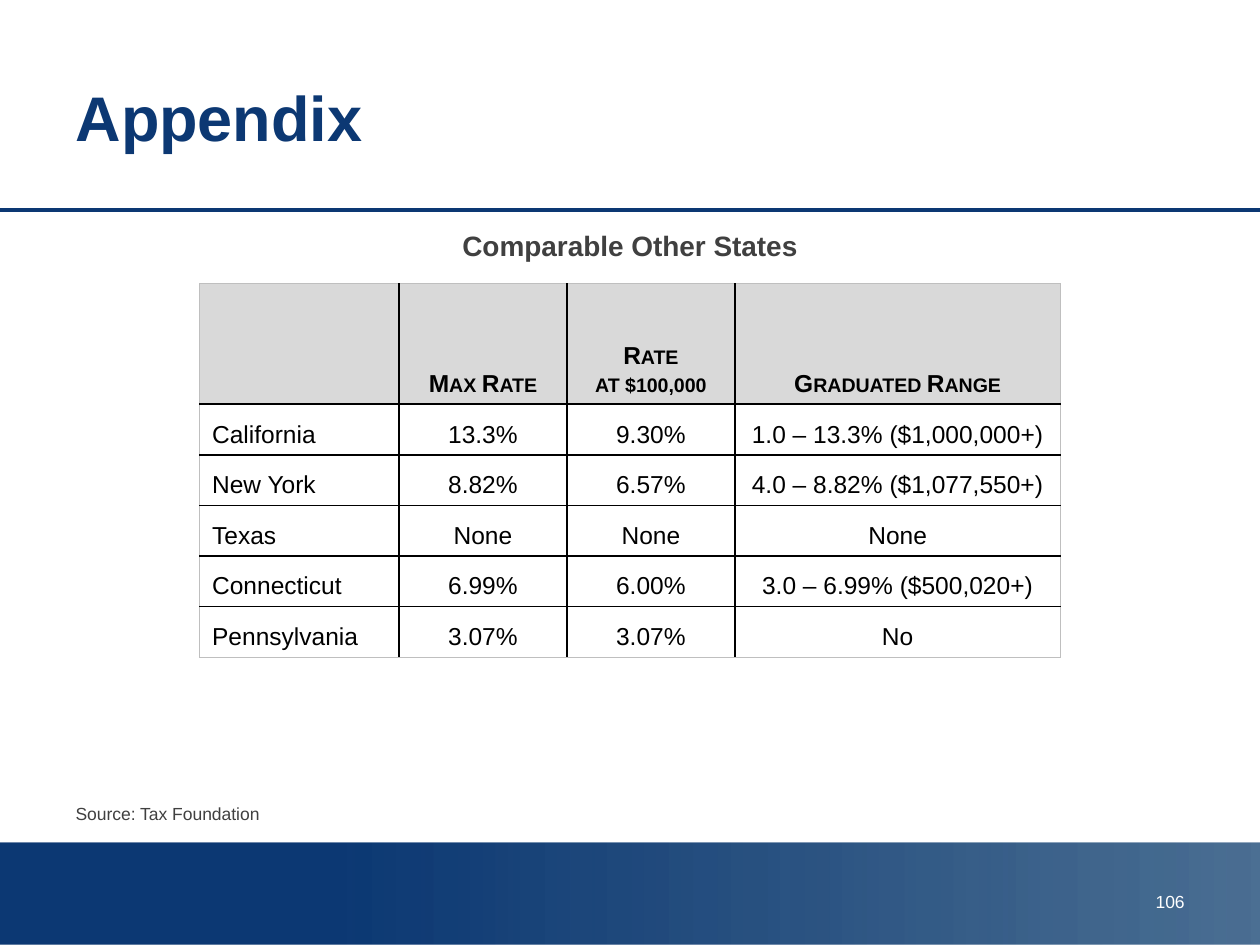
"""Build the appendix slide with a table of state tax rates."""
from pptx import Presentation
from pptx.dml.color import RGBColor
from pptx.enum import shapes, text
from pptx.oxml import parse_xml, ns
from pptx.util import Pt

THEME = {
    "font": "Arial",
    "navy": "0C3873", "deep": "003366", "body": "404040", "white": "FFFFFF",
    "black": "000000", "head": "D9D9D9", "edge": "BFBFBF",
    "title": 36, "sub": 16, "cell": 14, "small": 10,
}
MID = text.PP_ALIGN.CENTER


def style(para, size, color, bold=False, align=text.PP_ALIGN.LEFT):
    para.alignment = align
    for run in para.runs:
        font = run.font
        font.name = THEME["font"]
        font.size = Pt(THEME[size])
        font.bold = bold
        font.color.rgb = RGBColor.from_string(THEME[color])


def border(cell, side, color, width):
    cell.get_or_add_tcPr().append(parse_xml(
        f'<a:{side} {ns.nsdecls("a")} w="{Pt(width)}"><a:solidFill>'
        f'<a:srgbClr val="{THEME[color]}"/></a:solidFill></a:{side}>'))


deck = Presentation()
deck.slide_width, deck.slide_height = Pt(720), Pt(540)
slide = deck.slides.add_slide(deck.slide_layouts[1])
title, body = slide.placeholders

bar = slide.shapes.add_shape(
    shapes.MSO_SHAPE.RECTANGLE, Pt(0), Pt(481.5), Pt(721.5), Pt(58.5))
bar.shadow.inherit = False
bar.line.fill.background()
bar.fill.gradient()
bar.fill.gradient_angle = 0
for stop, (spot, tone) in zip(bar.fill.gradient_stops, [(0.25, "navy"), (1, "deep")]):
    stop.position = spot
    stop.color.rgb = RGBColor.from_string(THEME[tone])
last = bar._element.spPr.findall(".//" + ns.qn("a:srgbClr"))[-1]
last.append(parse_xml(f'<a:alpha {ns.nsdecls("a")} val="70000"/>'))

rule = slide.shapes.add_connector(
    shapes.MSO_CONNECTOR.STRAIGHT, Pt(0), Pt(120), Pt(720), Pt(120))
rule.line.color.rgb = RGBColor.from_string(THEME["navy"])
rule.line.width = Pt(2)
rule._element.spPr.append(parse_xml(f'<a:effectLst {ns.nsdecls("a")}/>'))

title.left, title.top, title.width, title.height = Pt(36), Pt(21.6), Pt(648), Pt(90)
title.text_frame.text = "Appendix"
title.text_frame.auto_size = text.MSO_AUTO_SIZE.NONE
title.text_frame.vertical_anchor = text.MSO_ANCHOR.MIDDLE
style(title.text_frame.paragraphs[0], "title", "navy", True)

body.left, body.top, body.width, body.height = Pt(36), Pt(127), Pt(648), Pt(355)
body.text_frame.text = "Comparable Other States\nSource: Tax Foundation"
body.text_frame.auto_size = text.MSO_AUTO_SIZE.NONE
sub, source = body.text_frame.paragraphs
for para, gap in [(sub, 0), (source, 309)]:
    props = para._p.get_or_add_pPr()
    props.set("marL", "0")
    props.set("indent", "0")
    props.append(parse_xml(f'<a:buNone {ns.nsdecls("a")}/>'))
    para.space_before = Pt(gap)
style(sub, "sub", "body", True, MID)
style(source, "small", "body")

num = slide.shapes.add_textbox(Pt(516), Pt(505.5), Pt(168), Pt(28.5)).text_frame
num.word_wrap = True
num.text = "106"
style(num.paragraphs[0], "small", "white", align=text.PP_ALIGN.RIGHT)

rows = [
    ["", "Max Rate", "Rate\vat $100,000", "Graduated Range"],
    ["California", "13.3%", "9.30%", "1.0 – 13.3% ($1,000,000+)"],
    ["New York", "8.82%", "6.57%", "4.0 – 8.82% ($1,077,550+)"],
    ["Texas", "None", "None", "None"],
    ["Connecticut", "6.99%", "6.00%", "3.0 – 6.99% ($500,020+)"],
    ["Pennsylvania", "3.07%", "3.07%", "No"],
]
widths = [114, 96, 96, 186]
heights = [69] + [28.9] * 5
table = slide.shapes.add_table(
    len(rows), len(widths), Pt(114), Pt(162), Pt(sum(widths)), Pt(sum(heights))).table
table.horz_banding = False
for col, width in zip(table.columns, widths):
    col.width = Pt(width)
for r, (row, height) in enumerate(zip(rows, heights)):
    table.rows[r].height = Pt(height)
    for c, words in enumerate(row):
        cell = table.cell(r, c)
        cell.vertical_anchor = text.MSO_ANCHOR.BOTTOM
        outer = {"lnL": c == 0, "lnR": c == len(widths) - 1,
                 "lnT": r == 0, "lnB": r == len(rows) - 1}
        for side, edge in outer.items():
            border(cell._tc, side, *(("edge", 0.5) if edge else ("black", 1)))
        if r == 0:
            cell.fill.solid()
            cell.fill.fore_color.rgb = RGBColor.from_string(THEME["head"])
        else:
            cell.fill.background()
        para = cell.text_frame.paragraphs[0]
        para.text = words
        para.line_spacing = Pt(16)
        style(para, "cell", "black", r == 0, MID if c else text.PP_ALIGN.LEFT)
        if r == 0:
            for run in para.runs:
                run._r.get_or_add_rPr().set("cap", "small")

deck.save("out.pptx")
